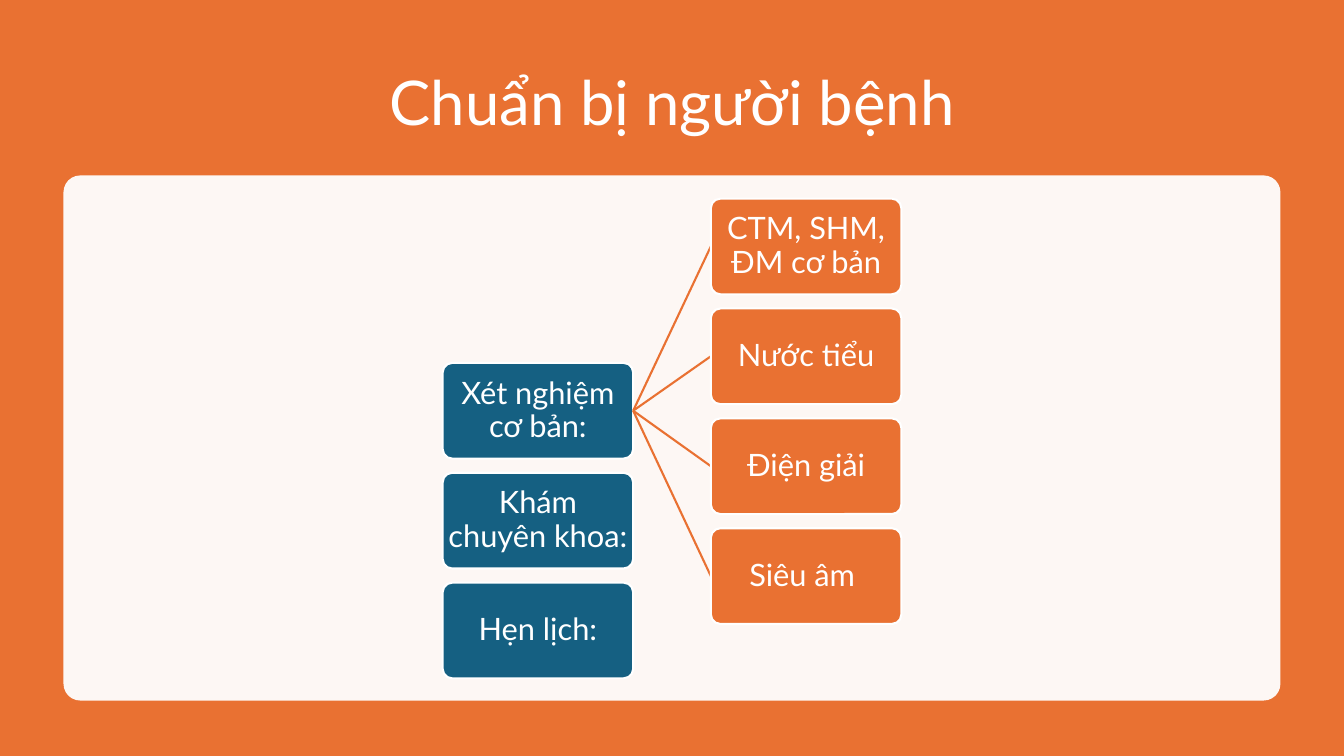
"""Build the patient preparation slide with its branching diagram of tests."""
from dataclasses import dataclass

import lxml.etree
import pptx
import pptx.dml.color
import pptx.enum.shapes
import pptx.enum.text
import pptx.oxml.ns
import pptx.shapes.autoshape
import pptx.shapes.connector
import pptx.slide
import pptx.text.text
import pptx.util

Inches = pptx.util.Inches
Pt = pptx.util.Pt
RGBColor = pptx.dml.color.RGBColor
ShapeType = pptx.enum.shapes.MSO_SHAPE
qn = pptx.oxml.ns.qn

ORANGE = RGBColor(0xE9, 0x71, 0x32)
BLUE = RGBColor(0x15, 0x60, 0x82)
WHITE = RGBColor(0xFF, 0xFF, 0xFF)

BOX_WIDTH = 1.89
BOX_HEIGHT = 0.95
ROW_PITCH = 1.09
LINE_WIDTH = Pt(1.5)
RIGHT_SIDE = 3
LEFT_SIDE = 1


@dataclass(frozen=True)
class BoxColumn:
    left: float
    top: float
    fill: RGBColor
    labels: tuple[str, ...]


STEPS = BoxColumn(4.39, 3.6, BLUE, ("Xét nghiệm cơ bản:", "Khám chuyên khoa:", "Hẹn lịch:"))
TESTS = BoxColumn(7.05, 1.97, ORANGE, ("CTM, SHM, ĐM cơ bản", "Nước tiểu", "Điện giải", "Siêu âm "))


def set_attributes(target: object, values: dict[str, object]) -> None:
    for name, value in values.items():
        setattr(target, name, value)


def write_text(frame: pptx.text.text.TextFrame, text: str, size: int, inset: float) -> None:
    frame.text = text
    margin = Inches(inset)
    set_attributes(frame, {
        "word_wrap": True,
        "auto_size": pptx.enum.text.MSO_AUTO_SIZE.NONE,
        "vertical_anchor": pptx.enum.text.MSO_ANCHOR.MIDDLE,
        "margin_left": margin, "margin_right": margin,
        "margin_top": margin, "margin_bottom": margin,
    })
    paragraph = frame.paragraphs[0]
    set_attributes(paragraph, {"alignment": pptx.enum.text.PP_ALIGN.CENTER, "line_spacing": 0.9})
    font = paragraph.runs[0].font
    set_attributes(font, {"name": "Lato", "size": Pt(size)})
    font.color.rgb = WHITE


def add_filled_shape(slide: pptx.slide.Slide, kind: ShapeType, left: float, top: float,
                     width: float, height: float, fill: RGBColor) -> pptx.shapes.autoshape.Shape:
    shape = slide.shapes.add_shape(kind, Inches(left), Inches(top), Inches(width), Inches(height))
    shape.shadow.inherit = False
    shape.fill.solid()
    shape.fill.fore_color.rgb = fill
    shape.line.fill.background()
    return shape


def add_column(slide: pptx.slide.Slide, column: BoxColumn) -> list[pptx.shapes.autoshape.Shape]:
    boxes = []
    for row, label in enumerate(column.labels):
        box = add_filled_shape(slide, ShapeType.ROUNDED_RECTANGLE, column.left,
                               column.top + row * ROW_PITCH, BOX_WIDTH, BOX_HEIGHT, column.fill)
        box.adjustments[0] = 0.1
        box.line.color.rgb = WHITE
        box.line.width = LINE_WIDTH
        write_text(box.text_frame, label, 22, 0.02)
        boxes.append(box)
    return boxes


def add_branch(slide: pptx.slide.Slide, step: pptx.shapes.autoshape.Shape,
               test: pptx.shapes.autoshape.Shape) -> pptx.shapes.connector.Connector:
    branch = slide.shapes.add_connector(pptx.enum.shapes.MSO_CONNECTOR.STRAIGHT, 0, 0, 0, 0)
    branch.begin_connect(step, RIGHT_SIDE)
    branch.end_connect(test, LEFT_SIDE)
    branch.line.color.rgb = ORANGE
    branch.line.width = LINE_WIDTH
    lxml.etree.SubElement(branch.element.spPr, qn("a:effectLst"))
    test.element.addprevious(branch.element)
    return branch


def add_title(slide: pptx.slide.Slide, text: str) -> None:
    title = slide.shapes.title
    set_attributes(title, {"left": Inches(0.92), "top": Inches(0.5),
                           "width": Inches(11.5), "height": Inches(1.1)})
    write_text(title.text_frame, text, 44, 0.05)


def add_background(slide: pptx.slide.Slide) -> None:
    backdrop = add_filled_shape(slide, ShapeType.RECTANGLE, 0, 0, 13.33, 7.5, ORANGE)
    slide.shapes.title.element.addprevious(backdrop.element)
    panel = add_filled_shape(slide, ShapeType.ROUNDED_RECTANGLE, 0.63, 1.74, 12.07, 5.21, WHITE)
    panel.adjustments[0] = 0.032
    color = panel.element.spPr.find(qn("a:solidFill")).find(qn("a:srgbClr"))
    lxml.etree.SubElement(color, qn("a:alpha"), val="95000")


def main() -> None:
    presentation = pptx.Presentation()
    set_attributes(presentation, {"slide_width": Inches(13.33), "slide_height": Inches(7.5)})
    slide = presentation.slides.add_slide(presentation.slide_layouts[5])
    add_title(slide, "Chuẩn bị người bệnh")
    add_background(slide)
    steps = add_column(slide, STEPS)
    for test in add_column(slide, TESTS):
        add_branch(slide, steps[0], test)
    presentation.save("out.pptx")


if __name__ == "__main__":
    main()
